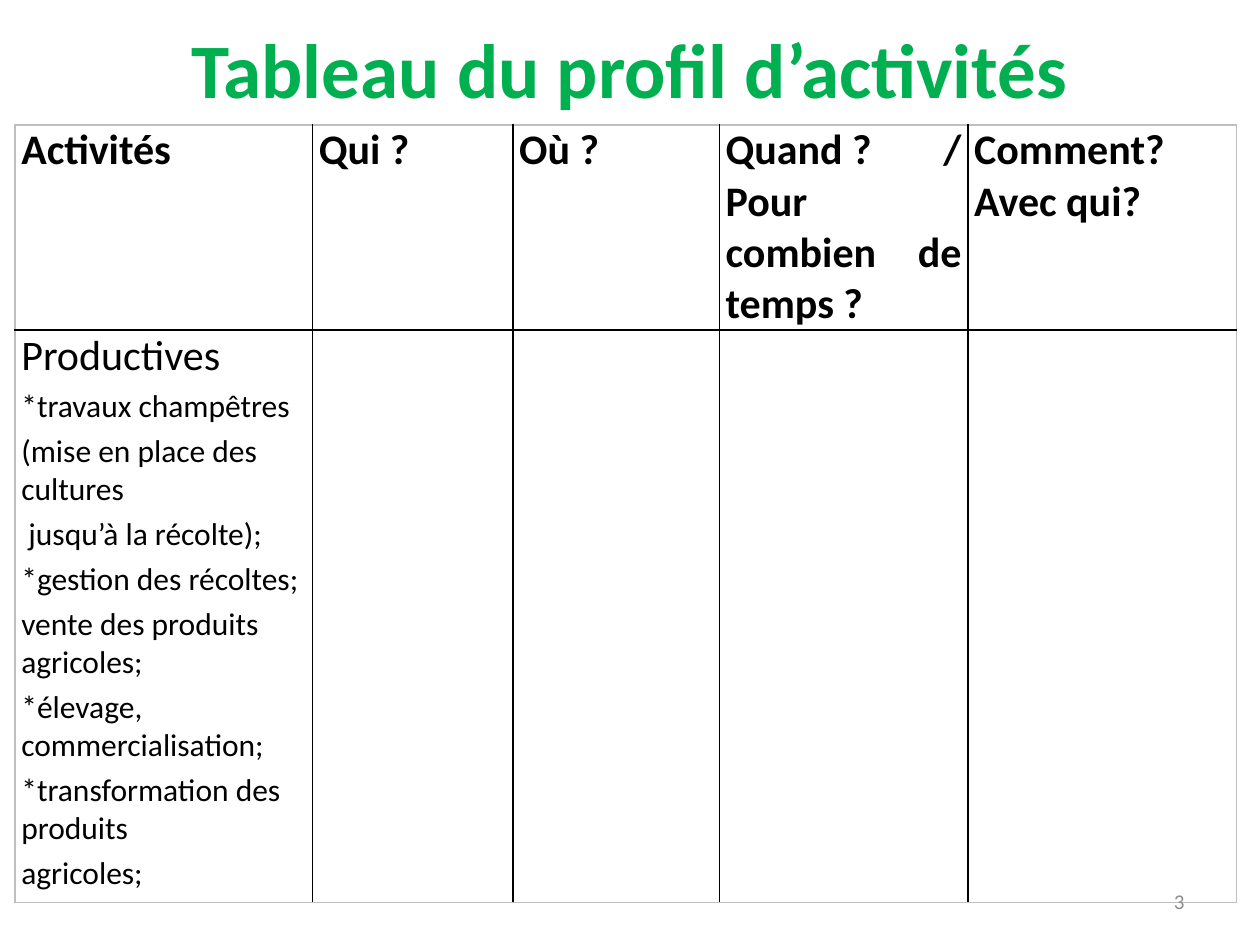
from lxml.etree import SubElement
from pptx import Presentation
from pptx.dml.color import RGBColor
from pptx.enum.text import MSO_ANCHOR, PP_ALIGN
from pptx.oxml.ns import qn
from pptx.util import Pt

FONT = "Calibri"
BLACK, GREEN, GREY, EDGE = "000000", "00B050", "8C8C8C", "BFBFBF"
COL_WIDTHS = [170, 114.5, 118, 142, 153.5]
ROW_HEIGHTS = [117, 327]
HEADERS = [
    "Activités",
    "Qui\u00a0?",
    "Où\u00a0?",
    "Quand\u00a0? / Pour combien de temps\u00a0? ",
    "Comment? Avec qui?",
]
CATEGORY = "Productives"
EXAMPLES = [
    "*travaux champêtres",
    "(mise en place des cultures",
    " jusqu’à la récolte);",
    "*gestion des récoltes;",
    "vente des produits agricoles;",
    "*élevage, commercialisation;",
    "*transformation des produits",
    "agricoles;",
]


def rgb(color):
    return RGBColor.from_string(color)


def add_run(p, text, size, color=BLACK, bold=False):
    r = p.add_run()
    r.text = text
    r.font.name = FONT
    r.font.size = Pt(size)
    r.font.bold = bold
    r.font.color.rgb = rgb(color)


def add_title(slide, text):
    sp = slide.shapes.title
    sp.left, sp.top, sp.width, sp.height = Pt(36), Pt(0), Pt(648), Pt(77)
    tf = sp.text_frame
    tf.vertical_anchor = MSO_ANCHOR.MIDDLE
    p = tf.paragraphs[0]
    p.alignment = PP_ALIGN.CENTER
    add_run(p, text, 44, GREEN, True)


def set_borders(cell, colors):
    """Draw 1 pt borders; colors maps L, R, T and B to hex strings."""
    tcPr = cell._tc.get_or_add_tcPr()
    for side, color in colors.items():
        ln = SubElement(tcPr, qn(f"a:ln{side}"), w=str(Pt(1)))
        fill = SubElement(ln, qn("a:solidFill"))
        SubElement(fill, qn("a:srgbClr"), val=color)


def format_cell(cell, row, col):
    last_row, last_col = len(ROW_HEIGHTS) - 1, len(COL_WIDTHS) - 1
    set_borders(cell, {
        "L": EDGE if col == 0 else BLACK,
        "R": EDGE if col == last_col else BLACK,
        "T": EDGE if row == 0 else BLACK,
        "B": EDGE if row == last_row else BLACK,
    })
    cell.fill.background()
    cell.margin_left = cell.margin_right = Pt(3.6)
    cell.margin_top = cell.margin_bottom = Pt(0)


def add_activity_table(slide):
    frame = slide.shapes.add_table(
        len(ROW_HEIGHTS), len(COL_WIDTHS), Pt(8.6), Pt(71.5),
        Pt(sum(COL_WIDTHS)), Pt(sum(ROW_HEIGHTS)))
    table = frame.table
    table.first_row = table.horz_banding = False
    for column, width in zip(table.columns, COL_WIDTHS):
        column.width = Pt(width)
    for i, height in enumerate(ROW_HEIGHTS):
        table.rows[i].height = Pt(height)
        for j in range(len(COL_WIDTHS)):
            format_cell(table.cell(i, j), i, j)

    for j, header in enumerate(HEADERS):
        p = table.cell(0, j).text_frame.paragraphs[0]
        p.alignment = PP_ALIGN.JUSTIFY
        add_run(p, header, 24, bold=True)

    tf = table.cell(1, 0).text_frame
    p = tf.paragraphs[0]
    p.alignment = PP_ALIGN.JUSTIFY
    add_run(p, CATEGORY, 24)
    for example in EXAMPLES:
        p = tf.add_paragraph()
        p.space_before = Pt(3.6)
        add_run(p, example, 18)


def add_page_number(slide, number):
    sp = slide.shapes.add_textbox(Pt(516), Pt(500.5), Pt(168), Pt(29))
    tf = sp.text_frame
    tf.word_wrap = True
    tf.vertical_anchor = MSO_ANCHOR.MIDDLE
    p = tf.paragraphs[0]
    p.alignment = PP_ALIGN.RIGHT
    add_run(p, number, 12, GREY)


def main():
    prs = Presentation()
    prs.slide_width, prs.slide_height = Pt(720), Pt(540)
    slide = prs.slides.add_slide(prs.slide_layouts[5])
    add_title(slide, "Tableau du profil d’activités")
    add_activity_table(slide)
    add_page_number(slide, "3")
    prs.save("out.pptx")


if __name__ == "__main__":
    main()
